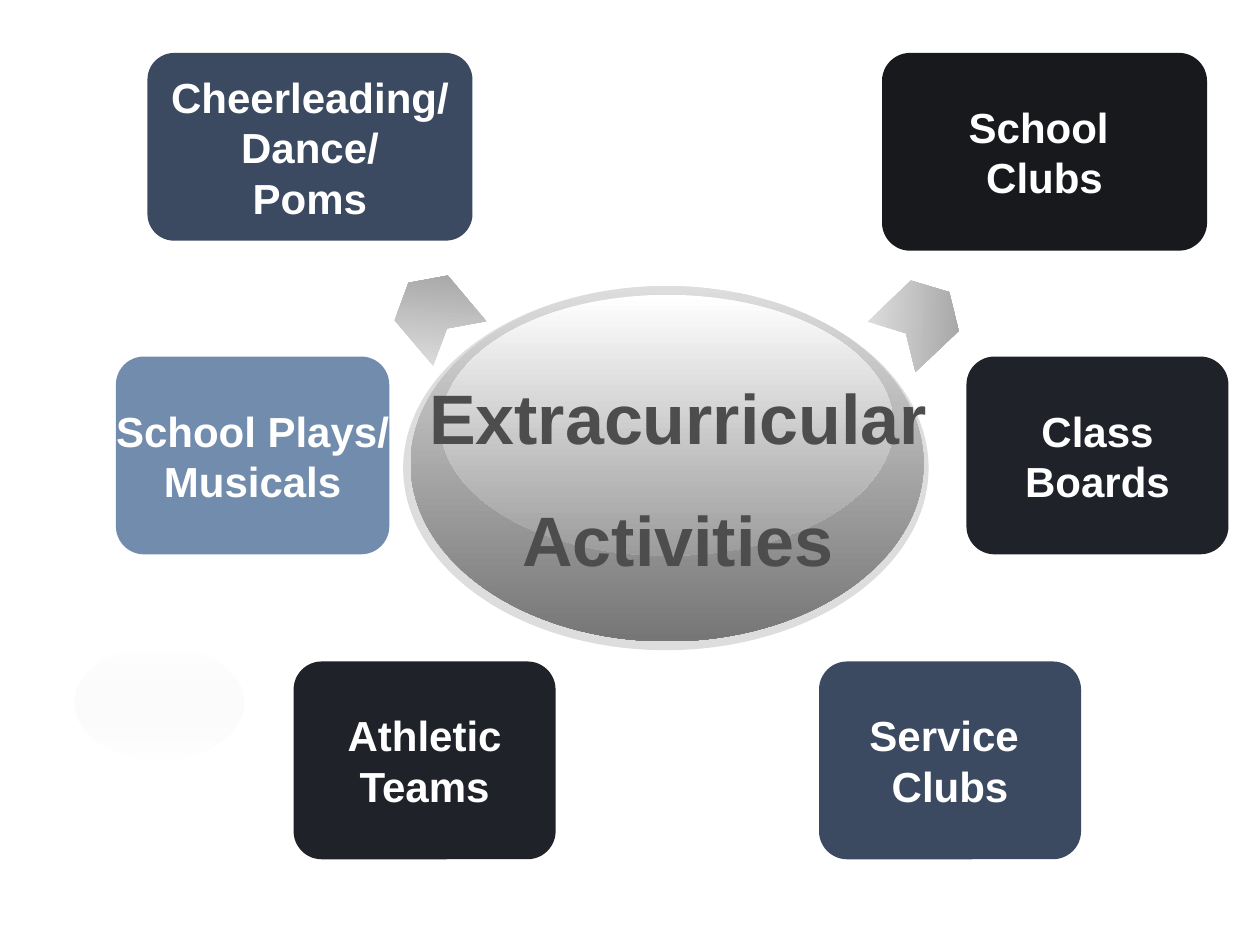
"""Build a slide mapping extracurricular activities around a central ellipse."""
from typing import NamedTuple, Optional

from lxml import etree
from pptx import Presentation
from pptx import util as u
from pptx.dml.color import RGBColor
from pptx.enum import shapes, text
from pptx.oxml.ns import qn

WHITE = RGBColor(0xFF, 0xFF, 0xFF)
SILVER = RGBColor(0xDD, 0xDD, 0xDD)
GRAY = RGBColor(0xA0, 0xA0, 0xA0)
SHADE = RGBColor(0x76, 0x76, 0x76)
GLOSS_END = RGBColor(0x9C, 0x9C, 0x9C)
TITLE_GRAY = RGBColor(0x4D, 0x4D, 0x4D)
BLACK = RGBColor(0x18, 0x19, 0x1C)
CHARCOAL = RGBColor(0x1F, 0x22, 0x29)
NAVY = RGBColor(0x3B, 0x4A, 0x61)
STEEL = RGBColor(0x71, 0x8C, 0xAC)


class Box(NamedTuple):
    left: float
    top: float
    width: float
    height: float


class Accent(NamedTuple):
    kind: shapes.MSO_SHAPE
    box: Box
    start: RGBColor
    end: Optional[RGBColor] = None
    angle: float = 270
    rotation: float = 0
    opacity: Optional[tuple[int, int]] = None


class Activity(NamedTuple):
    lines: tuple[str, ...]
    box: Box
    color: RGBColor
    wrap: bool = True


OVAL, CHEVRON = shapes.MSO_SHAPE.OVAL, shapes.MSO_SHAPE.CHEVRON
ACCENTS = (
    Accent(OVAL, Box(0.59, 5.12, 1.34, 0.91), WHITE, SILVER, opacity=(42, 0)),
    Accent(CHEVRON, Box(3.13, 2.21, 0.63, 0.55), SILVER, GRAY, 315, 229.9),
    Accent(CHEVRON, Box(6.99, 2.26, 0.63, 0.55), SILVER, GRAY, 315, 316.5),
    Accent(OVAL, Box(3.2, 2.27, 4.17, 2.89), SILVER),
    Accent(OVAL, Box(3.26, 2.27, 4.07, 2.82), SILVER, SHADE),
    Accent(OVAL, Box(3.5, 2.34, 3.59, 2.07), WHITE, GLOSS_END),
)
ACTIVITIES = (
    Activity(("Athletic Teams",), Box(2.33, 5.25, 2.08, 1.57), CHARCOAL),
    Activity(("School ", "Clubs"), Box(7, 0.42, 2.58, 1.57), BLACK, False),
    Activity(("Cheerleading/", "Dance/", "Poms"), Box(1.17, 0.42, 2.58, 1.49), NAVY),
    Activity(("Service ", "Clubs"), Box(6.5, 5.25, 2.08, 1.57), NAVY),
    Activity(("School Plays/", "Musicals"), Box(0.92, 2.83, 2.17, 1.57), STEEL, False),
    Activity(("Class Boards",), Box(7.67, 2.83, 2.08, 1.57), CHARCOAL),
)
TITLE = ("Extracurricular", "Activities")
TITLE_BOX = Box(3.17, 2.92, 4.42, 1.78)


def inches(box: Box) -> list[u.Length]:
    return [u.Inches(length) for length in box]


def add_plain_shape(slide, kind: shapes.MSO_SHAPE, box: Box):
    shape = slide.shapes.add_shape(kind, *inches(box))
    shape.shadow.inherit = False
    shape.line.fill.background()
    return shape


def draw_accent(slide, accent: Accent) -> None:
    shape = add_plain_shape(slide, accent.kind, accent.box)
    shape.rotation = accent.rotation
    if accent.kind == CHEVRON:
        shape.adjustments[0] = 0.285
    if accent.end is None:
        shape.fill.solid()
        shape.fill.fore_color.rgb = accent.start
        return
    shape.fill.gradient()
    shape.fill.gradient_angle = accent.angle
    for stop, color in zip(shape.fill.gradient_stops, (accent.start, accent.end)):
        stop.color.rgb = color
    if accent.opacity:
        for color, percent in zip(shape.element.iter(qn("a:srgbClr")), accent.opacity):
            etree.SubElement(color, qn("a:alpha"), val=str(percent * 1000))


def write_lines(frame, lines: tuple[str, ...], size: int, color: RGBColor, gap: int = 0) -> None:
    for index, line in enumerate(lines):
        paragraph = frame.add_paragraph() if index else frame.paragraphs[0]
        paragraph.text = line
        paragraph.alignment = text.PP_ALIGN.CENTER
        if index and gap:
            paragraph.space_before = u.Pt(gap)
        paragraph.font.name = "Arial"
        paragraph.font.size = u.Pt(size)
        paragraph.font.bold = True
        paragraph.font.color.rgb = color


def draw_activity(slide, activity: Activity) -> None:
    card = add_plain_shape(slide, shapes.MSO_SHAPE.ROUNDED_RECTANGLE, activity.box)
    card.adjustments[0] = 0.142
    card.fill.solid()
    card.fill.fore_color.rgb = activity.color
    card.text_frame.word_wrap = activity.wrap
    card.text_frame.vertical_anchor = text.MSO_ANCHOR.MIDDLE
    write_lines(card.text_frame, activity.lines, 24, WHITE)


def draw_title(slide) -> None:
    frame = slide.shapes.add_textbox(*inches(TITLE_BOX)).text_frame
    frame.word_wrap = True
    frame.auto_size = text.MSO_AUTO_SIZE.SHAPE_TO_FIT_TEXT
    write_lines(frame, TITLE, 40, TITLE_GRAY, gap=22)


def main() -> None:
    deck = Presentation()
    deck.slide_width, deck.slide_height = u.Inches(10), u.Inches(7.5)
    slide = deck.slides.add_slide(deck.slide_layouts[6])
    for accent in ACCENTS:
        draw_accent(slide, accent)
    for activity in ACTIVITIES:
        draw_activity(slide, activity)
    draw_title(slide)
    deck.save("out.pptx")


if __name__ == "__main__":
    main()
